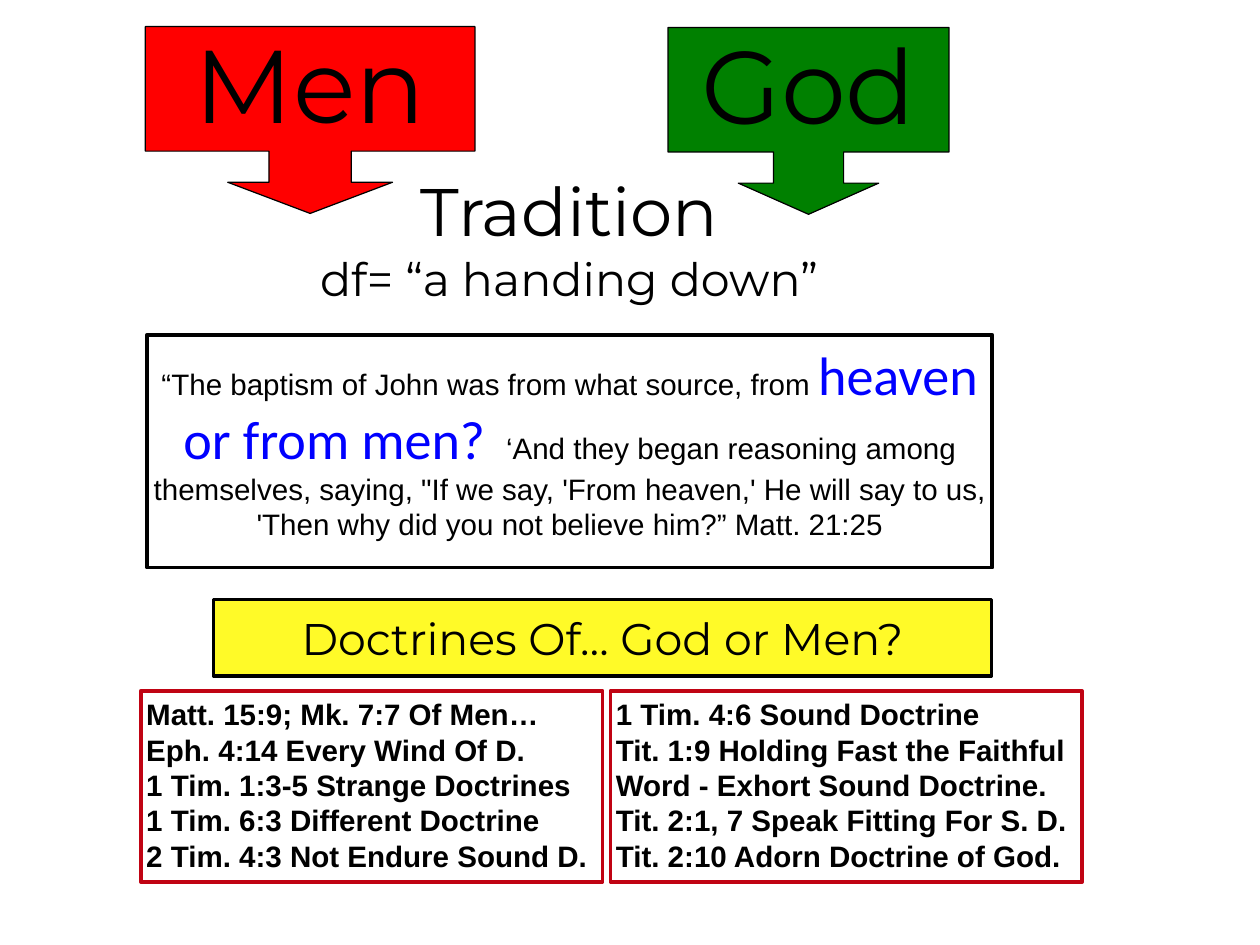
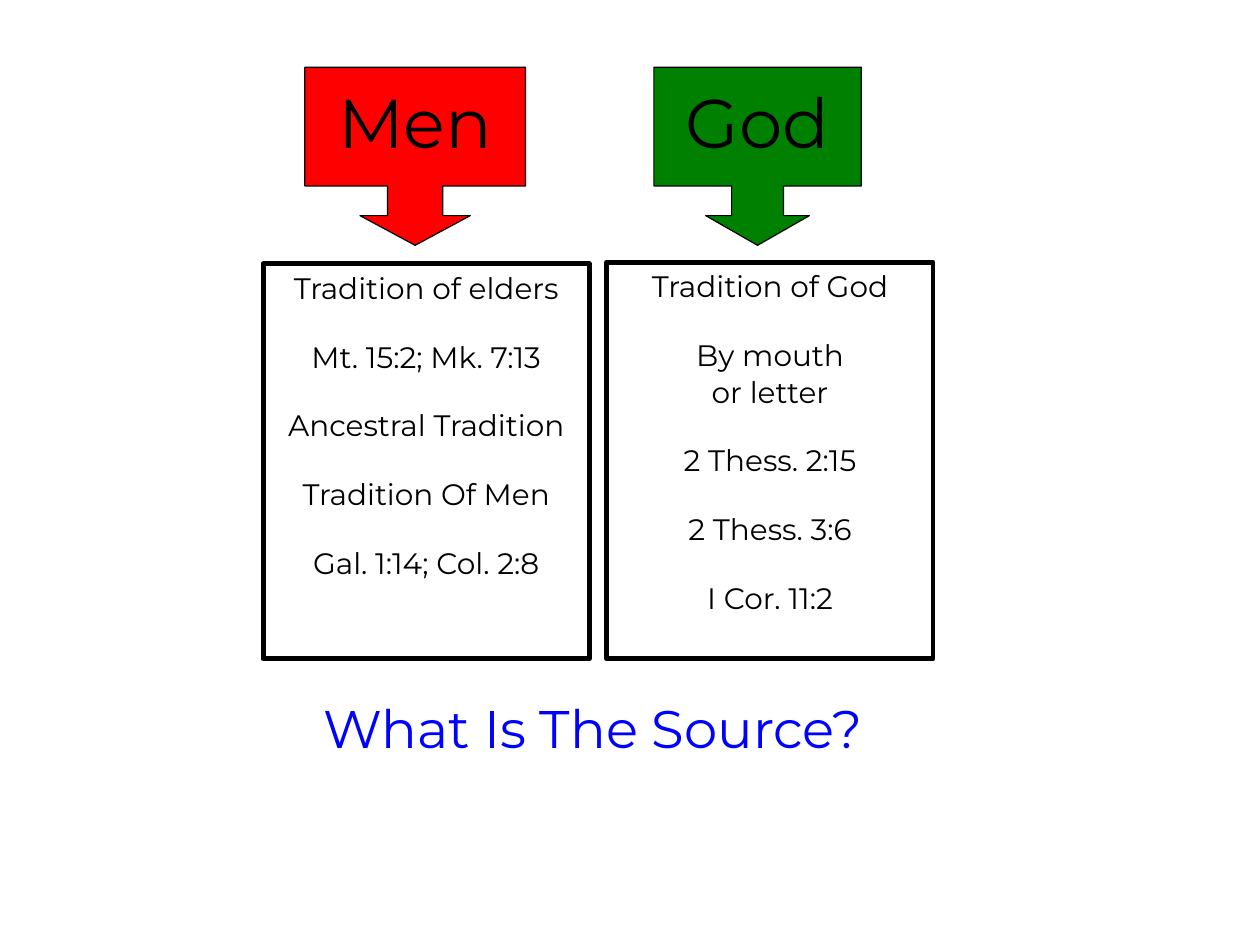
import pptx
import pptx.util
import pptx.dml.color
import pptx.enum.shapes
import pptx.enum.text

Inches = pptx.util.Inches
Pt = pptx.util.Pt
RGBColor = pptx.dml.color.RGBColor
PP_ALIGN = pptx.enum.text.PP_ALIGN
MSO_ANCHOR = pptx.enum.text.MSO_ANCHOR
MSO_SHAPE = pptx.enum.shapes.MSO_SHAPE

BLACK = RGBColor(0x00, 0x00, 0x00)
RED = RGBColor(0xFF, 0x00, 0x00)
GREEN = RGBColor(0x00, 0x80, 0x00)
BLUE = RGBColor(0x00, 0x00, 0xFF)
YELLOW = RGBColor(0xFF, 0xFA, 0x28)
CRIMSON = RGBColor(0xC0, 0x03, 0x13)

DISPLAY_FONT = "Montserrat"
BODY_FONT = "Arial"
ACCENT_FONT = "Calibri"
BODY_SIZE = 24
VERSE_GAP = 27


def set_font(font, size, name=DISPLAY_FONT, color=BLACK, bold=False):
    font.size = Pt(size)
    font.name = name
    font.color.rgb = color
    font.bold = bold


def prepare_frame(shape, inset=0.0, anchor=MSO_ANCHOR.MIDDLE, wrap=True):
    frame = shape.text_frame
    frame.word_wrap = wrap
    frame.vertical_anchor = anchor
    frame.margin_left = frame.margin_right = Inches(inset)
    frame.margin_top = frame.margin_bottom = Inches(inset)
    return frame


def add_paragraph(frame, text="", alignment=PP_ALIGN.CENTER, space_before=0):
    first = frame.paragraphs[0]
    paragraph = frame.add_paragraph() if first.runs else first
    paragraph.alignment = alignment
    paragraph.space_before = Pt(space_before)
    if text:
        paragraph.add_run().text = text
    return paragraph


def add_outlined(slide, kind, left, top, width, height, fill, line, line_width):
    shape = slide.shapes.add_shape(
        kind, Inches(left), Inches(top), Inches(width), Inches(height))
    shape.shadow.inherit = False
    if fill is None:
        shape.fill.background()
    else:
        shape.fill.solid()
        shape.fill.fore_color.rgb = fill
    shape.line.color.rgb = line
    shape.line.width = Pt(line_width)
    return shape


def add_box(slide, left, top, width, height, fill=None, line=BLACK, line_width=3):
    return add_outlined(slide, MSO_SHAPE.RECTANGLE, left, top, width, height,
                        fill, line, line_width)


def add_heading(slide, left, top, width, height, lines, color=BLACK, wrap=True):
    box = slide.shapes.add_textbox(
        Inches(left), Inches(top), Inches(width), Inches(height))
    frame = prepare_frame(box, wrap=wrap)
    for text, size in lines:
        set_font(add_paragraph(frame, text).font, size, color=color)


def add_source_arrow(slide, left, top, width, height, fill, label, size):
    arrow = add_outlined(slide, MSO_SHAPE.DOWN_ARROW_CALLOUT, left, top, width, height,
                         fill, BLACK, 1)
    shorter = min(width, height)
    proportions = (width / 4 / shorter, width / 4 / shorter, height / 6 / shorter, 2 / 3)
    for index, proportion in enumerate(proportions):
        arrow.adjustments[index] = proportion
    label_height = size / 72 * 1.5
    label_top = top + height / 3 - 0.07 - label_height / 2
    add_heading(slide, left, label_top, width, label_height, [(label, size)], wrap=False)


def add_reference_box(slide, left, width, references):
    box = add_box(slide, left, 7.8, width, 2.16, line=CRIMSON)
    frame = prepare_frame(box, 0.06, MSO_ANCHOR.TOP)
    for reference in references:
        paragraph = add_paragraph(frame, reference, PP_ALIGN.LEFT)
        set_font(paragraph.font, BODY_SIZE, BODY_FONT, bold=True)


def add_tradition_box(slide, left, top, height, entries):
    box = add_box(slide, left, top, 3.68, height, line_width=4)
    frame = prepare_frame(box, 0.07, MSO_ANCHOR.TOP)
    for text, gap in entries:
        set_font(add_paragraph(frame, text, space_before=gap).font, BODY_SIZE)


def add_quotation(slide):
    box = add_box(slide, 1.66, 3.78, 9.54, 2.63)
    frame = prepare_frame(box, 0.07, MSO_ANCHOR.TOP)
    paragraph = add_paragraph(frame, space_before=VERSE_GAP)
    pieces = (
        ("“The baptism of John was from what source, from ", BODY_SIZE, BODY_FONT, BLACK),
        ("heaven or from men? ", 44, ACCENT_FONT, BLUE),
        (" ‘And they began reasoning among themselves, saying, \"If we say, "
         "'From heaven,' He will say to us, 'Then why did you not believe him?” "
         "Matt. 21:25", BODY_SIZE, BODY_FONT, BLACK),
    )
    for text, size, name, color in pieces:
        run = paragraph.add_run()
        run.text = text
        set_font(run.font, size, name, color)


def build_doctrines_slide(slide):
    add_source_arrow(slide, 1.64, 0.3, 3.72, 2.11, RED, "Men", 84)
    add_source_arrow(slide, 7.54, 0.31, 3.17, 2.11, GREEN, "God", 84)
    add_heading(slide, 2.99, 1.77, 6.87, 1.82,
                [("Tradition", 54.6), ("df= “a handing down”", 37.4)])
    add_quotation(slide)
    banner = add_box(slide, 2.41, 6.77, 8.78, 0.86, fill=YELLOW)
    title = add_paragraph(prepare_frame(banner, 0.06), "Doctrines Of… God or Men?")
    set_font(title.font, 36)
    add_reference_box(slide, 1.59, 5.21, (
        "Matt. 15:9; Mk. 7:7 Of Men…",
        "Eph. 4:14 Every Wind Of D.",
        "1 Tim. 1:3-5 Strange Doctrines",
        "1 Tim. 6:3 Different Doctrine",
        "2 Tim. 4:3 Not Endure Sound D.",
    ))
    add_reference_box(slide, 6.89, 5.32, (
        "1 Tim. 4:6 Sound Doctrine",
        "Tit. 1:9 Holding Fast the Faithful Word - Exhort Sound Doctrine.",
        "Tit. 2:1, 7 Speak Fitting For S. D.",
        "Tit. 2:10 Adorn Doctrine of God.",
    ))


def build_traditions_slide(slide):
    add_tradition_box(slide, 2.97, 2.98, 4.46, (
        ("Tradition of elders", VERSE_GAP),
        ("Mt. 15:2; Mk. 7:13", VERSE_GAP),
        ("Ancestral Tradition", VERSE_GAP),
        ("Tradition Of Men", VERSE_GAP),
        ("Gal. 1:14; Col. 2:8", VERSE_GAP),
    ))
    add_tradition_box(slide, 6.85, 2.96, 4.48, (
        ("Tradition of God", VERSE_GAP),
        ("By mouth", VERSE_GAP),
        ("or letter", 1),
        ("2 Thess. 2:15", VERSE_GAP),
        ("2 Thess. 3:6", VERSE_GAP),
        ("I Cor. 11:2", VERSE_GAP),
    ))
    add_source_arrow(slide, 3.44, 0.76, 2.49, 2.01, RED, "Men", 56)
    add_source_arrow(slide, 7.38, 0.76, 2.34, 2.01, GREEN, "God", 56)
    add_heading(slide, 3.15, 7.64, 7.08, 1.15, [("What Is The Source?", 43)], BLUE)


def main():
    presentation = pptx.Presentation()
    presentation.slide_width = Inches(14.22)
    presentation.slide_height = Inches(10.67)
    blank = presentation.slide_layouts[6]
    for build in (build_doctrines_slide, build_traditions_slide):
        build(presentation.slides.add_slide(blank))
    presentation.save("out.pptx")


if __name__ == "__main__":
    main()
